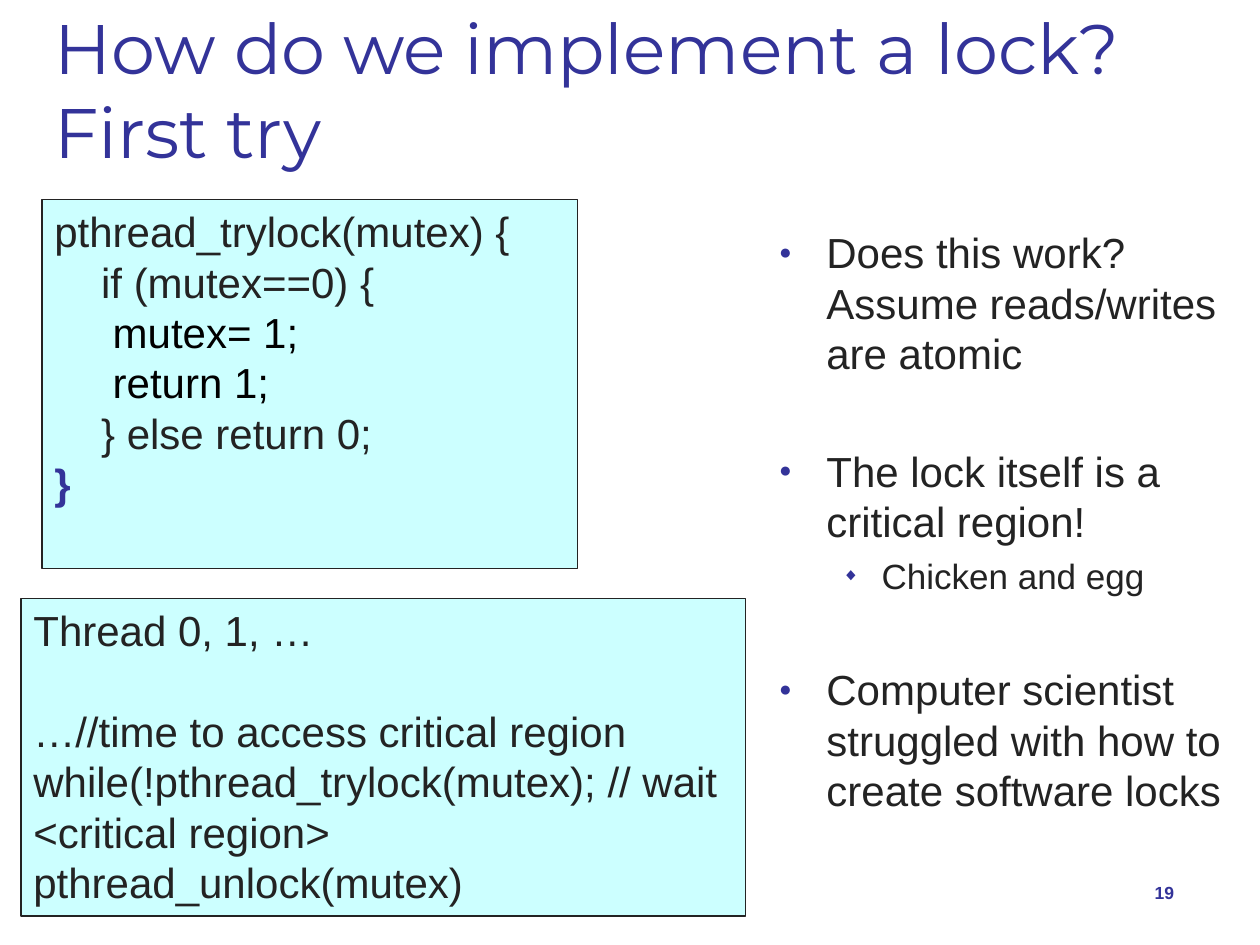
from pptx import Presentation
from pptx.dml.color import RGBColor
from pptx.enum.shapes import MSO_SHAPE
from pptx.enum.text import MSO_ANCHOR, MSO_AUTO_SIZE, PP_ALIGN
from pptx.oxml.ns import qn
from pptx.util import Pt
from lxml import etree

RECT = MSO_SHAPE.RECTANGLE
TOP, MIDDLE, BOTTOM = MSO_ANCHOR.TOP, MSO_ANCHOR.MIDDLE, MSO_ANCHOR.BOTTOM
LEFT, RIGHT = PP_ALIGN.LEFT, PP_ALIGN.RIGHT
FIXED = MSO_AUTO_SIZE.NONE

BLUE, INK, BLACK, CYAN = "333399", "232323", "000000", "CCFFFF"
LEADING = 1.2
LINE = 24 * LEADING
STEP = 4.8
GAP = LINE + 2 * STEP
TAB = 26.7
DEEP = 33.3


def color(code):
    return RGBColor.from_string(code)


class Deck:
    def __init__(self):
        self.file = Presentation()
        self.file.slide_width = Pt(720)
        self.file.slide_height = Pt(540)
        self.slide = self.file.slides.add_slide(self.file.slide_layouts[1])

    def place(self, shape, box):
        for name, value in zip(("left", "top", "width", "height"), box):
            setattr(shape, name, Pt(value))

    def frame(self, shape, anchor):
        frame = shape.text_frame
        form = {"word_wrap": True, "auto_size": FIXED, "vertical_anchor": anchor,
                "margin_left": Pt(7.2), "margin_right": Pt(7.2),
                "margin_top": Pt(3.6), "margin_bottom": Pt(3.6)}
        for name, value in form.items():
            setattr(frame, name, value)
        return frame

    def label(self, para, text, size, code=INK, bold=False, face="Arial", align=LEFT):
        run = para.add_run()
        run.text = text
        para.alignment = align
        form = {"size": Pt(size), "name": face, "bold": bold}
        for name, value in form.items():
            setattr(run.font, name, value)
        run.font.color.rgb = color(code)

    def paras(self, frame, count):
        for _ in range(count - 1):
            frame.add_paragraph()
        return frame.paragraphs

    def space(self, para, size, before):
        para.line_spacing = Pt(size * LEADING)
        para.space_before = Pt(before)

    def indent(self, para, left, first=0):
        props = para._p.get_or_add_pPr()
        props.set("marL", str(Pt(left)))
        props.set("indent", str(Pt(first)))
        return props

    def bullet(self, para, left, hang, mark):
        props = self.indent(para, left, -hang)
        tint = etree.SubElement(props, qn("a:buClr"))
        etree.SubElement(tint, qn("a:srgbClr"), val=BLUE)
        etree.SubElement(props, qn("a:buSzPct"), val="50000")
        etree.SubElement(props, qn("a:buFont"), typeface="Arial")
        etree.SubElement(props, qn("a:buChar"), char=mark)

    def title(self, text, box):
        shape = self.slide.shapes.title
        self.place(shape, box)
        frame = self.frame(shape, BOTTOM)
        self.label(frame.paragraphs[0], text, 40, BLUE, face="Montserrat")

    def body(self, items, box):
        shape = self.slide.placeholders[1]
        self.place(shape, box)
        paras = self.paras(self.frame(shape, TOP), len(items))
        for para, (level, before, text) in zip(paras, items):
            size, left, hang, mark = ((24, 27, 27, "●"), (20, 58.5, 22.5, "◆"))[level]
            para.level = level
            self.label(para, text, size)
            self.space(para, size, before)
            self.bullet(para, left, hang, mark)

    def code(self, lines, box):
        shape = self.slide.shapes.add_shape(RECT, *map(Pt, box))
        shape.shadow.inherit = False
        shape.fill.solid()
        shape.fill.fore_color.rgb = color(CYAN)
        shape.line.color.rgb = color(INK)
        shape.line.width = Pt(0.75)
        paras = self.paras(self.frame(shape, TOP), len(lines))
        for para, (text, left, before, tint, bold) in zip(paras, lines):
            self.label(para, text, 24, tint, bold)
            self.space(para, 24, before)
            self.indent(para, left)

    def number(self, text, box):
        shape = self.slide.shapes.add_textbox(*map(Pt, box))
        frame = self.frame(shape, MIDDLE)
        self.label(frame.paragraphs[0], text, 10, BLUE, True, align=RIGHT)


def main():
    deck = Deck()
    deck.title("How do we implement a lock? First try", (24, 12, 672, 90))
    deck.body([
        (0, 0, "Does this work? Assume reads/writes are atomic"),
        (0, GAP, "The lock itself is a critical region!"),
        (1, STEP, "Chicken and egg"),
        (0, GAP, "Computer scientist struggled with how to create software locks"),
    ], (438, 126, 276, 348))
    deck.number("19", (630, 492, 48, 36))
    deck.code([
        ("pthread_trylock(mutex) {", 0, 0, INK, False),
        ("if (mutex==0) {", TAB, 0, INK, False),
        ("mutex= 1;", DEEP, 0, BLACK, False),
        ("return 1;", DEEP, 0, BLACK, False),
        ("} else return 0;", TAB, 0, INK, False),
        ("}", 0, 0, BLUE, True),
    ], (24, 114, 306, 211))
    deck.code([
        ("Thread 0, 1, …", 0, 0, INK, False),
        ("…//time to access critical region", 0, LINE, INK, False),
        ("while(!pthread_trylock(mutex); // wait", 0, 0, INK, False),
        ("<critical region>", 0, 0, INK, False),
        ("pthread_unlock(mutex)", 0, 0, INK, False),
    ], (12, 342, 414, 181.5))
    deck.file.save("out.pptx")


if __name__ == "__main__":
    main()
